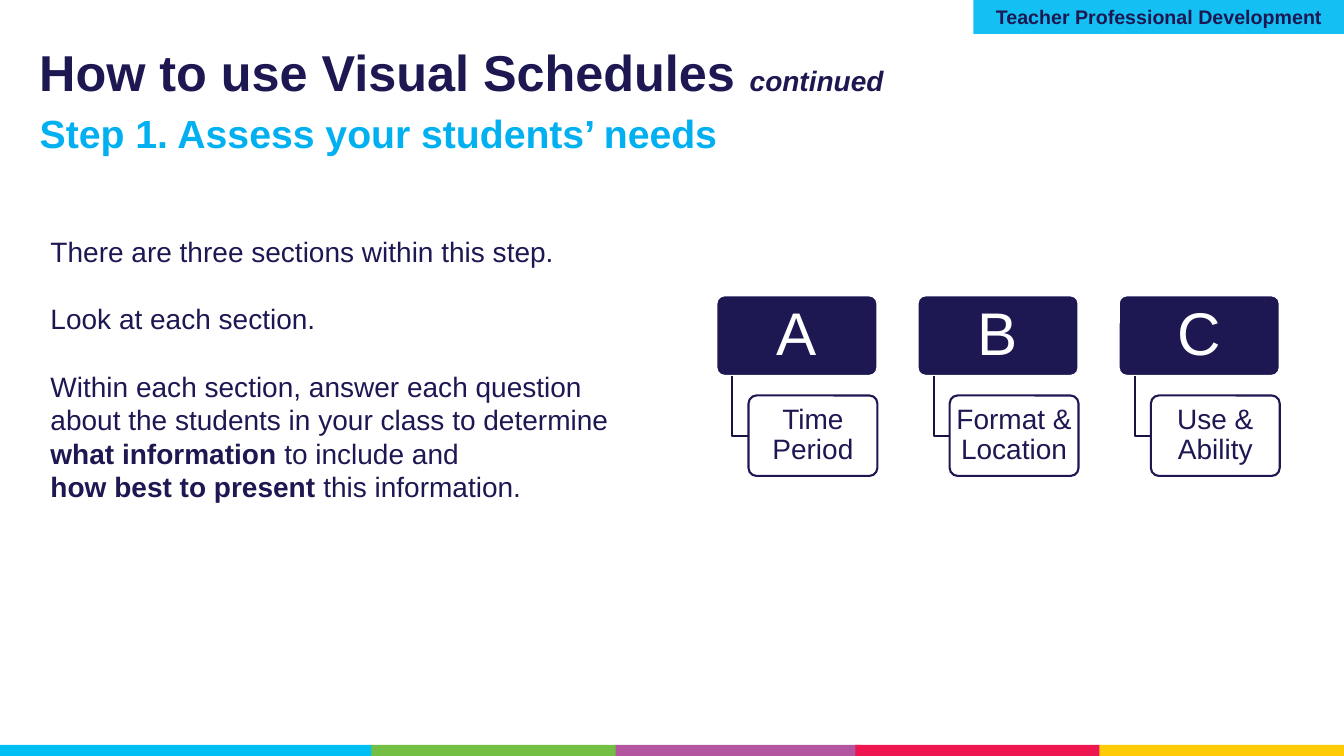
from dataclasses import dataclass
from typing import NamedTuple

from pptx import Presentation
from pptx.dml.color import RGBColor
from pptx.enum.shapes import MSO_SHAPE as Preset
from pptx.enum.text import MSO_ANCHOR as Anchor, PP_ALIGN as Align
from pptx.util import Pt


@dataclass(frozen=True)
class Theme:
    font: str = "Arial"
    navy: str = "1D1752"
    connector: str = "171242"
    white: str = "FFFFFF"
    sky: str = "00B0F0"
    tag_fill: str = "14C0F3"
    title_size: float = 36
    step_size: float = 28
    letter_size: float = 43
    text_size: float = 20
    tag_size: float = 14
    line_width: float = 1.5


THEME = Theme()


class Box(NamedTuple):
    left: float
    top: float
    width: float
    height: float

    def lengths(self) -> tuple:
        return tuple(Pt(value) for value in self)


class Run(NamedTuple):
    text: str
    bold: bool = False


class BodyParagraph(NamedTuple):
    runs: list[Run]
    space_before: float = 0


class Section(NamedTuple):
    letter: str
    topic: str


class Stripe(NamedTuple):
    left: float
    width: float
    color: str


STRIPE_TOP, STRIPE_HEIGHT = 532, 8
STRIPES = [
    Stripe(-0.5, 266.5, "00C0F3"),
    Stripe(265.3, 175, "72BF44"),
    Stripe(439.7, 175, "B455A0"),
    Stripe(611, 175, "ED1651"),
    Stripe(785.3, 175, "FFCB05"),
]

SECTIONS = [
    Section("A", "Time Period"),
    Section("B", "Format & Location"),
    Section("C", "Use & Ability"),
]
SECTION_LEFT, SECTION_TOP, SECTION_PITCH = 511.7, 211, 143.7
HEAD_WIDTH, TOPIC_WIDTH, CARD_HEIGHT = 115, 92, 57.5
ELBOW_INDENT, TOPIC_INDENT, TOPIC_DROP = 11.5, 23, 71.5

BODY = [
    BodyParagraph([Run("There are three sections within this step.")]),
    BodyParagraph([Run("Look at each section.")], 24),
    BodyParagraph([
        Run("Within each section, answer each question about the students "
            "in your class to determine "),
        Run("what information ", True),
        Run("to include and"),
    ], 24),
    BodyParagraph([Run("how best to present ", True), Run("this information.")]),
]


def rgb(color: str) -> RGBColor:
    return RGBColor.from_string(color)


def style(font, size: float, color: str, bold: bool | None = None) -> None:
    font.name = THEME.font
    font.size = Pt(size)
    font.color.rgb = rgb(color)
    font.bold = bold


def set_insets(frame, left: float, top: float, right: float, bottom: float) -> None:
    frame.margin_left, frame.margin_top = Pt(left), Pt(top)
    frame.margin_right, frame.margin_bottom = Pt(right), Pt(bottom)


def add_panel(slide, preset: Preset, box: Box, fill: str, line: str | None = None):
    panel = slide.shapes.add_shape(preset, *box.lengths())
    panel.shadow.inherit = False
    panel.fill.solid()
    panel.fill.fore_color.rgb = rgb(fill)
    if line:
        panel.line.color.rgb = rgb(line)
        panel.line.width = Pt(THEME.line_width)
    else:
        panel.line.fill.background()
    return panel


def add_card(slide, box: Box, text: str, size: float, color: str, fill: str, line: str) -> None:
    card = add_panel(slide, Preset.ROUNDED_RECTANGLE, box, fill, line)
    card.adjustments[0] = 0.1
    frame = card.text_frame
    frame.word_wrap = True
    frame.vertical_anchor = Anchor.MIDDLE
    set_insets(frame, 2, 2, 2, 2)
    label = frame.paragraphs[0]
    label.text = text
    label.alignment = Align.CENTER
    label.line_spacing = 0.9
    style(label.font, size, color)


def add_section(slide, section: Section, left: float) -> None:
    """Draw a letter card, its topic card and the elbow joining them."""
    head = Box(left, SECTION_TOP, HEAD_WIDTH, CARD_HEIGHT)
    topic = Box(left + TOPIC_INDENT, SECTION_TOP + TOPIC_DROP, TOPIC_WIDTH, CARD_HEIGHT)
    add_card(slide, head, section.letter, THEME.letter_size,
             THEME.white, THEME.navy, THEME.white)

    elbow_x, elbow_y = Pt(left + ELBOW_INDENT), Pt(topic.top + CARD_HEIGHT / 2)
    builder = slide.shapes.build_freeform(elbow_x, Pt(head.top + CARD_HEIGHT))
    builder.add_line_segments([(elbow_x, elbow_y), (Pt(topic.left), elbow_y)], close=False)
    elbow = builder.convert_to_shape()
    elbow.shadow.inherit = False
    elbow.fill.background()
    elbow.line.color.rgb = rgb(THEME.connector)
    elbow.line.width = Pt(THEME.line_width)

    add_card(slide, topic, section.topic, THEME.text_size,
             THEME.navy, THEME.white, THEME.navy)


def set_title(slide) -> None:
    title = slide.shapes.title
    title.left, title.top, title.width, title.height = Box(28, 34, 873.5, 75.5).lengths()
    frame = title.text_frame
    frame.vertical_anchor = Anchor.TOP
    set_insets(frame, 0, 0, 7.2, 3.6)
    heading = frame.paragraphs[0]
    heading.alignment = Align.LEFT
    heading.line_spacing = 0.9
    style(heading.font, THEME.title_size, THEME.navy, True)
    heading.add_run().text = "How to use Visual Schedules "
    continued = heading.add_run()
    continued.text = "continued"
    continued.font.size = Pt(THEME.text_size)
    continued.font.italic = True


def add_body(slide) -> None:
    frame = slide.shapes.add_textbox(*Box(29, 164, 416, 201).lengths()).text_frame
    frame.word_wrap = True
    for index, content in enumerate(BODY):
        paragraph = frame.add_paragraph() if index else frame.paragraphs[0]
        style(paragraph.font, THEME.text_size, THEME.navy)
        if content.space_before:
            paragraph.space_before = Pt(content.space_before)
        for part in content.runs:
            run = paragraph.add_run()
            run.text = part.text
            run.font.bold = part.bold


def add_step(slide) -> None:
    frame = slide.shapes.add_textbox(*Box(21.3, 78, 523.5, 37.5).lengths()).text_frame
    frame.word_wrap = True
    set_insets(frame, 7.2, 0, 7.2, 3.6)
    step = frame.paragraphs[0]
    step.text = "Step 1. Assess your students’ needs"
    style(step.font, THEME.step_size, THEME.sky, True)


def add_tag(slide) -> None:
    tag = add_panel(slide, Preset.RECTANGLE, Box(695.3, 0, 265, 24.3), THEME.tag_fill)
    label = tag.text_frame.paragraphs[0]
    label.text = "Teacher Professional Development"
    label.alignment = Align.CENTER
    style(label.font, THEME.tag_size, THEME.navy, True)


def main() -> None:
    deck = Presentation()
    deck.slide_width, deck.slide_height = Pt(960), Pt(540)
    slide = deck.slides.add_slide(deck.slide_layouts.get_by_name("Title Only"))
    for stripe in STRIPES:
        box = Box(stripe.left, STRIPE_TOP, stripe.width, STRIPE_HEIGHT)
        add_panel(slide, Preset.RECTANGLE, box, stripe.color)
    set_title(slide)
    for index, section in enumerate(SECTIONS):
        add_section(slide, section, SECTION_LEFT + index * SECTION_PITCH)
    add_body(slide)
    add_step(slide)
    add_tag(slide)
    deck.save("out.pptx")


if __name__ == "__main__":
    main()
